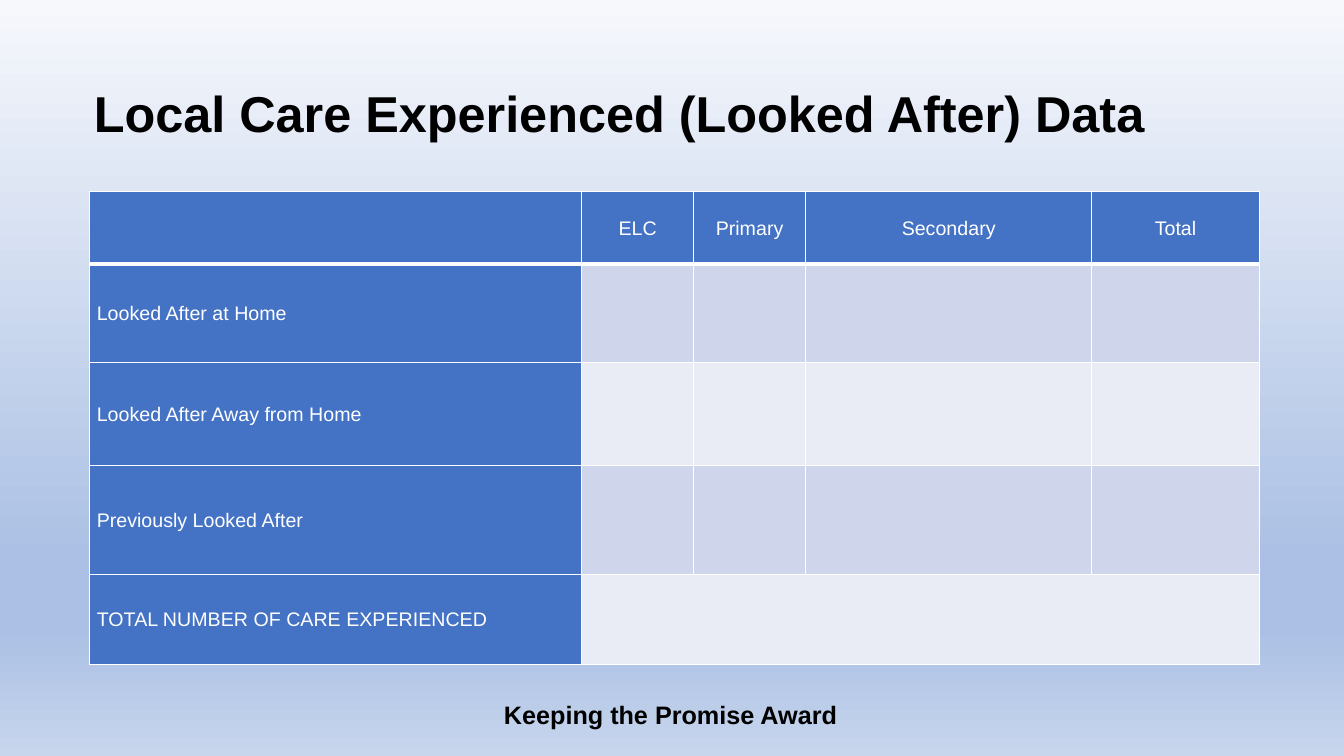
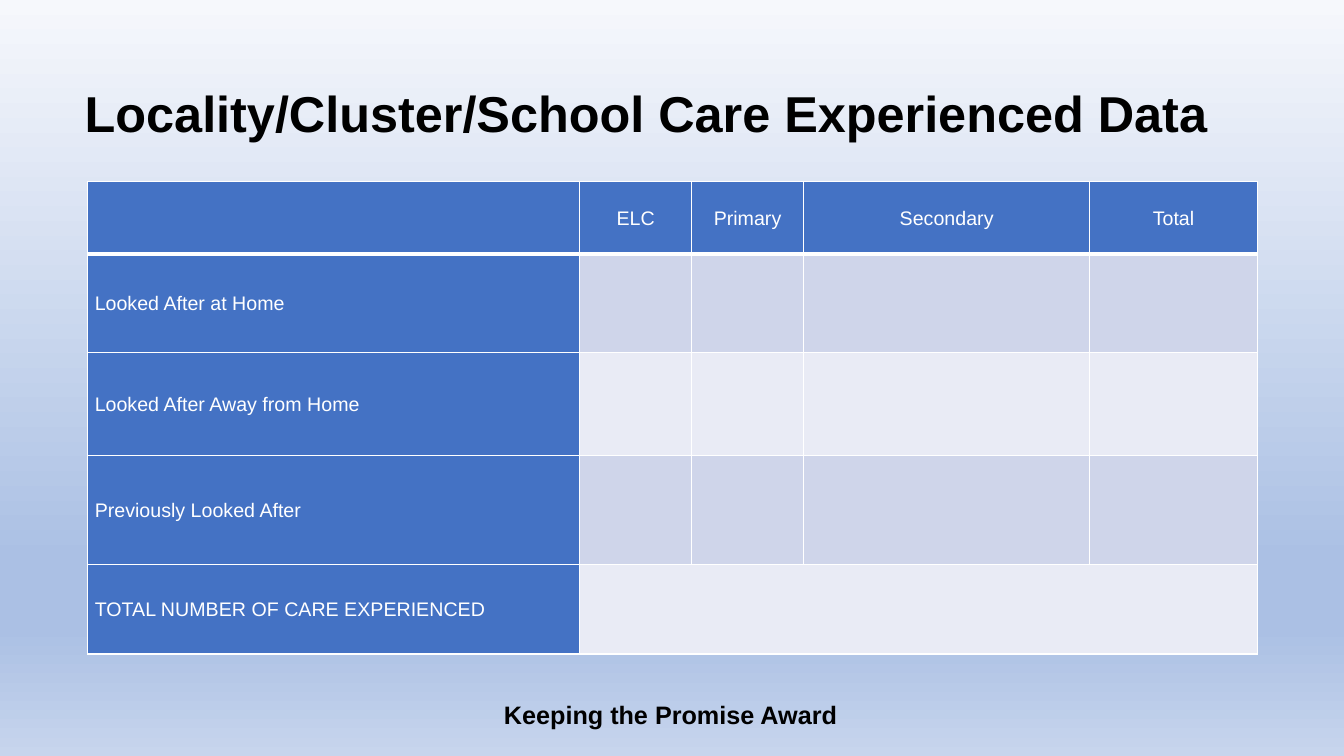
from lxml import etree
from pptx import Presentation
from pptx import util as u
from pptx.dml.color import RGBColor
from pptx.enum import text
from pptx.oxml import ns

INK = {
    "black": "000000", "white": "FFFFFF", "head": "4472C4",
    "odd": "CFD5EA", "even": "E9EBF5",
}
SKY = [(0, "F6F8FC"), (74, "ABC0E4"), (83, "ABC0E4"), (100, "C7D5ED")]
FONT = "Arial"
COLS = [4.88, 1.11, 1.11, 2.84, 1.66]
ROWS = [0.72, 0.98, 1.02, 1.08, 0.89]
HEADS = ["", "ELC", "Primary", "Secondary", "Total"]
LABELS = ["Looked After at Home", "Looked After Away from Home",
          "Previously Looked After", "TOTAL NUMBER OF CARE EXPERIENCED"]


def add(parent, tag, **attrs):
    return etree.SubElement(parent, ns.qn(tag), **attrs)


class Deck:
    def __init__(self):
        self.prs = Presentation()
        self.prs.slide_width = u.Inches(13.33)
        self.prs.slide_height = u.Inches(7.5)
        self.slide = None
        self.sky()

    def sky(self):
        """Gradient on the master, from top to bottom."""
        master = self.prs.slide_master
        fill = master.background.fill
        fill.gradient()
        fill.gradient_angle = 270
        stops = next(master.element.iter(ns.qn("a:gsLst")))
        for old in list(stops):
            stops.remove(old)
        for pos, color in SKY:
            stop = add(stops, "a:gs", pos=str(pos * 1000))
            add(stop, "a:srgbClr", val=color)

    def style(self, para, size, color, bold=False, align=text.PP_ALIGN.LEFT):
        para.alignment = align
        font = para.font
        font.name, font.size, font.bold = FONT, u.Pt(size), bold
        font.color.rgb = RGBColor.from_string(INK[color])

    def page(self, title, left, width):
        self.slide = self.prs.slides.add_slide(self.prs.slide_layouts[5])
        box = self.slide.shapes.title
        box.left, box.top = u.Inches(left), u.Inches(0.76)
        box.width, box.height = u.Inches(width), u.Inches(0.71)
        frame = box.text_frame
        frame.text = title
        frame.word_wrap = True
        frame.vertical_anchor = text.MSO_ANCHOR.TOP
        frame.auto_size = text.MSO_AUTO_SIZE.SHAPE_TO_FIT_TEXT
        self.style(frame.paragraphs[0], 36, "black", bold=True)
        self.footer()

    def footer(self):
        box = self.slide.shapes.add_textbox(
            u.Inches(4.9), u.Inches(6.89), u.Inches(3.54), u.Inches(0.4))
        frame = box.text_frame
        frame.text = "Keeping the Promise Award"
        frame.word_wrap = False
        frame.auto_size = text.MSO_AUTO_SIZE.SHAPE_TO_FIT_TEXT
        self.style(frame.paragraphs[0], 18, "black", bold=True)

    def cell(self, cell, color, label="", align=text.PP_ALIGN.LEFT, base=1):
        cell.fill.solid()
        cell.fill.fore_color.rgb = RGBColor.from_string(INK[color])
        if label:
            cell.text = label
            cell.vertical_anchor = text.MSO_ANCHOR.MIDDLE
            cell.margin_left = cell.margin_right = u.Inches(0.07)
            cell.margin_top, cell.margin_bottom = u.Inches(0.01), 0
            self.style(cell.text_frame.paragraphs[0], 14, "white", align=align)
        # Borders come before the fill in the cell properties
        props = cell._tc.get_or_add_tcPr()
        edges = [("L", 1), ("R", 1), ("T", 1), ("B", base)]
        for spot, (side, width) in enumerate(edges):
            line = add(props, f"a:ln{side}", w=str(u.Pt(width)))
            add(add(line, "a:solidFill"), "a:srgbClr", val=INK["white"])
            props.insert(spot, line)

    def table(self, left, top):
        grid = self.slide.shapes.add_table(
            len(ROWS), len(COLS), u.Inches(left), u.Inches(top),
            u.Inches(sum(COLS)), u.Inches(sum(ROWS))).table
        for col, width in zip(grid.columns, COLS):
            col.width = u.Inches(width)
        for row, height in zip(grid.rows, ROWS):
            row.height = u.Inches(height)
        # Header row
        for c, head in enumerate(HEADS):
            self.cell(grid.cell(0, c), "head", head, text.PP_ALIGN.CENTER, 3)
        # Label column and banded body
        for r, label in enumerate(LABELS, 1):
            self.cell(grid.cell(r, 0), "head", label)
            for c in range(1, len(COLS)):
                self.cell(grid.cell(r, c), "odd" if r % 2 else "even")
        # One wide cell for the grand total
        last = len(ROWS) - 1
        grid.cell(last, 1).merge(grid.cell(last, len(COLS) - 1))


def main():
    deck = Deck()

    # Local data
    deck.page("Local Care Experienced (Looked After) Data", 0.83, 11.71)
    deck.table(0.89, 1.9)

    # Locality, cluster and school data
    deck.page("Locality/Cluster/School Care Experienced Data", 0.74, 12.42)
    deck.table(0.87, 1.8)

    deck.prs.save("out.pptx")


if __name__ == "__main__":
    main()
